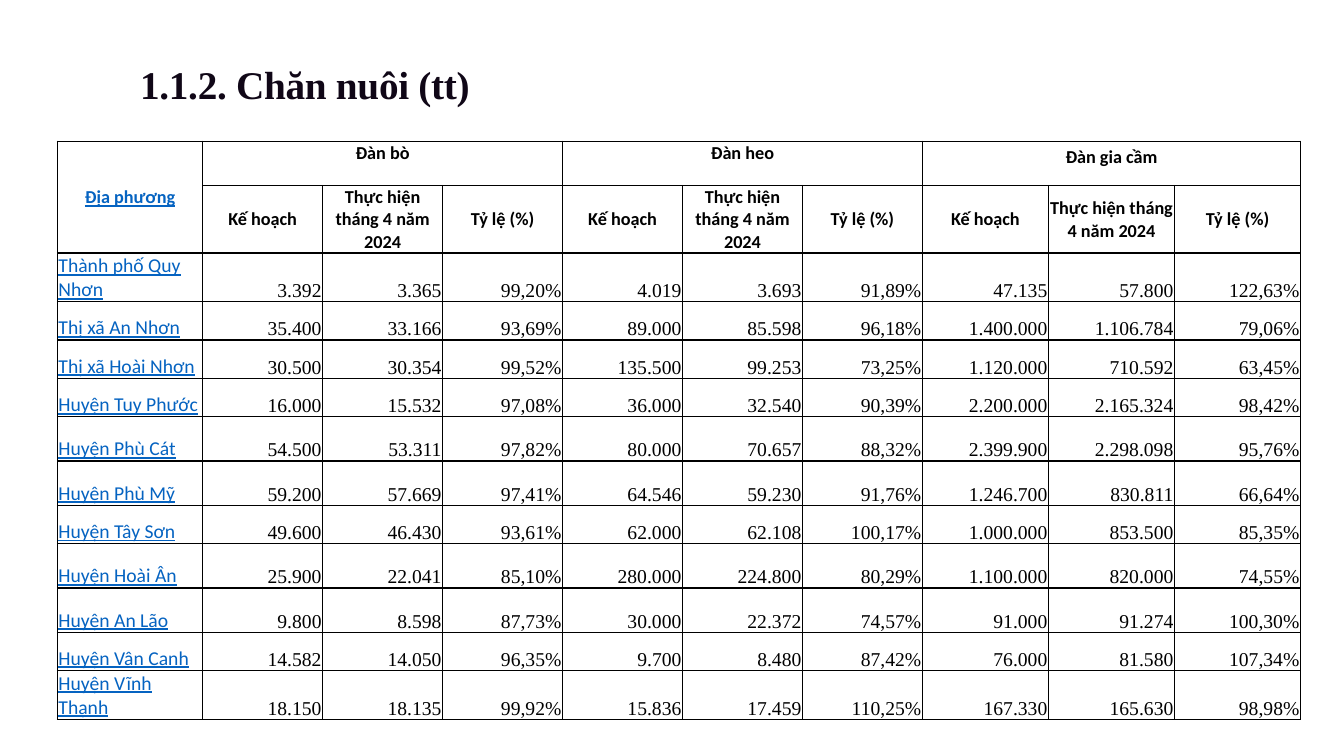
from lxml.etree import SubElement
from pptx import Presentation
from pptx.dml.color import RGBColor
from pptx.enum.text import MSO_ANCHOR as Anchor, MSO_AUTO_SIZE as AutoSize, PP_ALIGN as Align
from pptx.oxml.ns import qn
from pptx.util import Inches, Pt

BLACK = RGBColor(0x00, 0x00, 0x00)
LINK_BLUE = RGBColor(0x05, 0x63, 0xC1)
TITLE_INK = RGBColor(0x10, 0x07, 0x17)

TITLE_FONT = {"name": "Times New Roman", "size": Pt(28), "bold": True}
HEADER_FONT = {"name": "Calibri", "size": Pt(13), "bold": True, "underline": False}
CORNER_FONT = {**HEADER_FONT, "underline": True}
PLACE_FONT = {"name": "Calibri", "size": Pt(14), "bold": False, "underline": True}
FIGURE_FONT = {"name": "Times New Roman", "size": Pt(14), "bold": False, "underline": False}

TIGHT = {"margin_left": Inches(0.01), "margin_right": Inches(0.01),
         "margin_top": Inches(0.01), "margin_bottom": 0}
MIDDLE = {**TIGHT, "vertical_anchor": Anchor.MIDDLE}
BOTTOM = {**TIGHT, "vertical_anchor": Anchor.BOTTOM}
TOP = {**TIGHT, "vertical_anchor": Anchor.TOP}

COLUMN_WIDTHS = [1.44] + [1.19] * 6 + [1.25] * 3
ROW_HEIGHTS = [0.44, 0.67, 0.48, 0.38, 0.38, 0.38, 0.44, 0.44, 0.38, 0.44, 0.44, 0.38, 0.47]
HERDS = ["Đàn bò", "Đàn heo", "Đàn gia cầm"]
MEASURES = ["Kế hoạch", "Thực hiện tháng 4 năm 2024", "Tỷ lệ (%)"]
DISTRICTS = [
    ("Thành phố Quy Nhơn", "3.392 3.365 99,20% 4.019 3.693 91,89% 47.135 57.800 122,63%"),
    ("Thị xã An Nhơn", "35.400 33.166 93,69% 89.000 85.598 96,18% 1.400.000 1.106.784 79,06%"),
    ("Thị xã Hoài Nhơn", "30.500 30.354 99,52% 135.500 99.253 73,25% 1.120.000 710.592 63,45%"),
    ("Huyện Tuy Phước", "16.000 15.532 97,08% 36.000 32.540 90,39% 2.200.000 2.165.324 98,42%"),
    ("Huyện Phù Cát", "54.500 53.311 97,82% 80.000 70.657 88,32% 2.399.900 2.298.098 95,76%"),
    ("Huyện Phù Mỹ", "59.200 57.669 97,41% 64.546 59.230 91,76% 1.246.700 830.811 66,64%"),
    ("Huyện Tây Sơn", "49.600 46.430 93,61% 62.000 62.108 100,17% 1.000.000 853.500 85,35%"),
    ("Huyện Hoài Ân", "25.900 22.041 85,10% 280.000 224.800 80,29% 1.100.000 820.000 74,55%"),
    ("Huyện An Lão", "9.800 8.598 87,73% 30.000 22.372 74,57% 91.000 91.274 100,30%"),
    ("Huyện Vân Canh", "14.582 14.050 96,35% 9.700 8.480 87,42% 76.000 81.580 107,34%"),
    ("Huyện Vĩnh Thạnh", "18.150 18.135 99,92% 15.836 17.459 110,25% 167.330 165.630 98,98%"),
]


def apply_format(target, values):
    """Set every attribute named in values on target."""
    for name, value in values.items():
        setattr(target, name, value)


def write_text(paragraph, text, font, color, align):
    """Write one formatted run into a paragraph and return it."""
    paragraph.alignment = align
    run = paragraph.add_run()
    run.text = text
    apply_format(run.font, font)
    run.font.color.rgb = color
    return run


def outline_cell(cell):
    """Give a cell four thin black borders and no fill."""
    properties = cell._tc.get_or_add_tcPr()
    for side in ("a:lnL", "a:lnR", "a:lnT", "a:lnB"):
        line = SubElement(properties, qn(side), w=str(Pt(1)))
        fill = SubElement(line, qn("a:solidFill"))
        SubElement(fill, qn("a:srgbClr"), val=str(BLACK))
    cell.fill.background()


def fill_cell(cell, text, layout, font, color, align):
    """Place formatted text in a table cell."""
    apply_format(cell, layout)
    write_text(cell.text_frame.paragraphs[0], text, font, color, align)


def add_title(slide, left, top, width, height):
    """Move the title placeholder into its box and write the heading."""
    title = slide.shapes.title
    apply_format(title, {"left": left, "top": top, "width": width, "height": height})
    frame = title.text_frame
    apply_format(frame, {"word_wrap": False, "auto_size": AutoSize.NONE,
                         "vertical_anchor": Anchor.MIDDLE})
    run = write_text(frame.paragraphs[0], "1.1.2. Chăn nuôi (tt)", TITLE_FONT, TITLE_INK, Align.LEFT)
    run.font._element.set("spc", "-20")


def fill_header(table):
    """Merge and write the two header rows."""
    corner = table.cell(0, 0)
    corner.merge(table.cell(1, 0))
    fill_cell(corner, "Địa phương", MIDDLE, CORNER_FONT, LINK_BLUE, Align.CENTER)
    for group, herd in enumerate(HERDS):
        first = 1 + group * len(MEASURES)
        heading = table.cell(0, first)
        heading.merge(table.cell(0, first + len(MEASURES) - 1))
        layout = {} if herd == HERDS[-1] else TOP
        fill_cell(heading, herd, layout, HEADER_FONT, BLACK, Align.CENTER)
        for offset, measure in enumerate(MEASURES):
            fill_cell(table.cell(1, first + offset), measure, MIDDLE, HEADER_FONT, BLACK, Align.CENTER)


def fill_districts(table):
    """Write one row of figures for each district."""
    for row, (place, figures) in enumerate(DISTRICTS, start=2):
        layout = MIDDLE if row == 2 else BOTTOM
        fill_cell(table.cell(row, 0), place, layout, PLACE_FONT, LINK_BLUE, Align.LEFT)
        for column, figure in enumerate(figures.split(), start=1):
            fill_cell(table.cell(row, column), figure, BOTTOM, FIGURE_FONT, BLACK, Align.RIGHT)


def add_livestock_table(slide, left, top, width, height):
    """Build the livestock table in the given box."""
    table = slide.shapes.add_table(len(ROW_HEIGHTS), len(COLUMN_WIDTHS), left, top, width, height).table
    apply_format(table, {"first_row": False, "horz_banding": False})
    for column, column_width in zip(table.columns, COLUMN_WIDTHS):
        column.width = Inches(column_width)
    for row, row_height in zip(table.rows, ROW_HEIGHTS):
        row.height = Inches(row_height)
    for cell in table.iter_cells():
        outline_cell(cell)
    fill_header(table)
    fill_districts(table)


def main():
    """Build the slide and save the presentation."""
    presentation = Presentation()
    apply_format(presentation, {"slide_width": Inches(13.33), "slide_height": Inches(7.5)})
    slide = presentation.slides.add_slide(presentation.slide_layouts[5])
    add_title(slide, Inches(1.29), Inches(0.53), Inches(3.65), Inches(0.6))
    add_livestock_table(slide, Inches(0.57), Inches(1.4),
                        Inches(sum(COLUMN_WIDTHS)), Inches(sum(ROW_HEIGHTS)))
    presentation.save("out.pptx")


if __name__ == "__main__":
    main()
